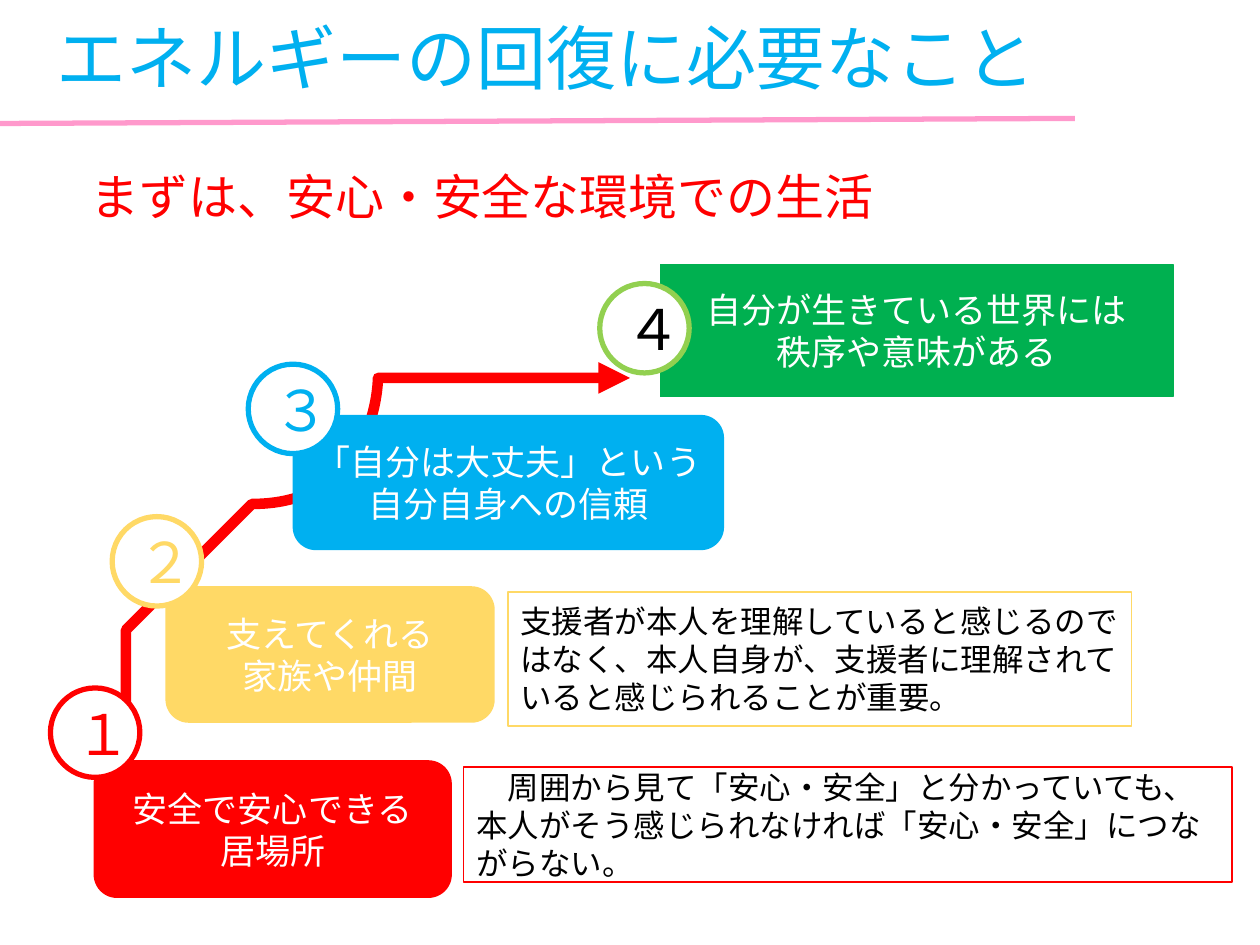
"""Build the slide on the four steps that restore energy."""
import pptx
import pptx.util
import pptx.dml.color
import pptx.enum.shapes
import pptx.enum.text
import pptx.oxml
import pptx.oxml.ns

Inches = pptx.util.Inches
Pt = pptx.util.Pt
Shape = pptx.enum.shapes.MSO_SHAPE
Align = pptx.enum.text.PP_ALIGN
Anchor = pptx.enum.text.MSO_ANCHOR
qn = pptx.oxml.ns.qn


def paint(color_format, value):
    color_format.rgb = pptx.dml.color.RGBColor.from_string(value)


def write(shape, text, size, color, font="Karla", align=Align.LEFT, anchor=Anchor.MIDDLE, wrap=True):
    frame = shape.text_frame
    frame.text = text
    frame.word_wrap = wrap
    frame.auto_size = pptx.enum.text.MSO_AUTO_SIZE.NONE
    frame.vertical_anchor = anchor
    for para in frame.paragraphs:
        para.alignment = align
        para.font.size = Pt(size)
        para.font.name = font
        paint(para.font.color, color)


deck = pptx.Presentation()
deck.slide_width = Inches(10)
deck.slide_height = Inches(7.5)
page = deck.slides.add_slide(deck.slide_layouts[5])
shapes = page.shapes

title = shapes.title
title.left, title.top, title.width, title.height = [Inches(v) for v in (0.35, 0, 8.67, 0.9)]
write(title, "エネルギーの回復に必要なこと", 40, "00B0F0", font="Noto Sans CJK JP")

rule = shapes.add_connector(
    pptx.enum.shapes.MSO_CONNECTOR.STRAIGHT, Inches(0), Inches(0.98), Inches(8.53), Inches(0.94))
paint(rule.line.color, "FF99CC")
rule.line.width = Pt(3)
pptx.oxml.ns  # noqa
rule_properties = rule.element.spPr
rule_properties.append(pptx.oxml.parse_xml(
    '<a:effectLst xmlns:a="http://schemas.openxmlformats.org/drawingml/2006/main"/>'))

curve_points = [
    (1.17, 7.05),
    (0.99, 6.91), (0.82, 6.78), (0.71, 6.64),
    (0.6, 6.49), (0.53, 6.31), (0.53, 6.16),
    (0.53, 6.02), (0.59, 5.96), (0.71, 5.75),
    (0.83, 5.55), (0.98, 5.25), (1.23, 4.94),
    (1.48, 4.62), (1.88, 4.2), (2.23, 3.88),
    (2.58, 3.56), (2.98, 3.22), (3.32, 3.02),
    (3.67, 2.82), (4.06, 2.71), (4.3, 2.65),
    (4.54, 2.59), (4.65, 2.62), (4.76, 2.65),
]
builder = shapes.build_freeform(*curve_points[0], scale=Inches(1))
builder.add_line_segments(curve_points[1:], close=False)
arrow = builder.convert_to_shape()
arrow.shadow.inherit = False
arrow.fill.background()
paint(arrow.line.color, "FF0000")
arrow.line.width = Pt(6)
tail = arrow.line._get_or_add_ln().makeelement(qn("a:tailEnd"), {"type": "triangle"})
arrow.line._get_or_add_ln().append(tail)
segments = list(arrow.element.iter(qn("a:lnTo")))
for first in range(0, len(segments), 3):
    bezier = segments[first].makeelement(qn("a:cubicBezTo"), {})
    segments[first].addprevious(bezier)
    for segment in segments[first:first + 3]:
        bezier.append(segment[0])
        segment.getparent().remove(segment)

rounded, square, circle = Shape.ROUNDED_RECTANGLE, Shape.RECTANGLE, Shape.OVAL
step = {"size": 20, "color": "FFFFFF", "align": Align.CENTER}
note = {"size": 18, "color": "000000"}
number = {"size": 32, "align": Align.CENTER}
boxes = [
    (rounded, (2.33, 3.3, 3.41, 1.06), "00B0F0", "00B0F0", 1, "「自分は大丈夫」という\n自分自身への信頼", step),
    (square, (5.24, 2.1, 4.07, 1.05), "00B050", "00B050", 0.75,
     "自分が生きている世界には\n秩序や意味がある", step | {"font": "Calibri"}),
    (rounded, (0.75, 6.04, 2.83, 1.08), "FF0000", "FF0000", 1, "安全で安心できる\n居場所", step),
    (rounded, (1.32, 4.66, 2.6, 1.07), "FFD966", "FFD966", 1, "支えてくれる\n家族や仲間", step),
    (circle, (0.4, 5.46, 0.71, 0.71), "FFFFFF", "FF0000", 3, "１", number | {"color": "FF0000"}),
    (circle, (0.89, 4.1, 0.71, 0.71), "FFFFFF", "FFD966", 3, "２", number | {"color": "FFD966"}),
    (circle, (1.97, 2.89, 0.71, 0.71), "FFFFFF", "00B0F0", 3, "３", number | {"color": "00B0F0"}),
    (circle, (4.76, 2.25, 0.71, 0.71), "FFFFFF", "92D050", 3, "４", number | {"color": "000000"}),
    (square, (3.68, 6.09, 6.1, 0.91), "FFFFFF", "FF0000", 1,
     "　周囲から見て「安心・安全」と分かっていても、本人がそう感じられなければ「安心・安全」につながらない。",
     note | {"font": "Noto Sans CJK JP"}),
    (square, (4.03, 4.7, 4.95, 1.06), "FFFFFF", "FFD966", 1,
     "支援者が本人を理解していると感じるのではなく、本人自身が、支援者に理解されていると感じられることが重要。", note),
]
for kind, place, fill, outline, weight, text, text_format in boxes:
    box = shapes.add_shape(kind, *[Inches(v) for v in place])
    box.shadow.inherit = False
    box.fill.solid()
    paint(box.fill.fore_color, fill)
    paint(box.line.color, outline)
    box.line.width = Pt(weight)
    write(box, text, **text_format)

lead = shapes.add_textbox(Inches(0.62), Inches(1.27), Inches(6.48), Inches(0.57))
write(lead, "まずは、安心・安全な環境での生活", 28, "FF0000",
      font="Noto Sans CJK JP", anchor=Anchor.TOP, wrap=False)

deck.save("out.pptx")
